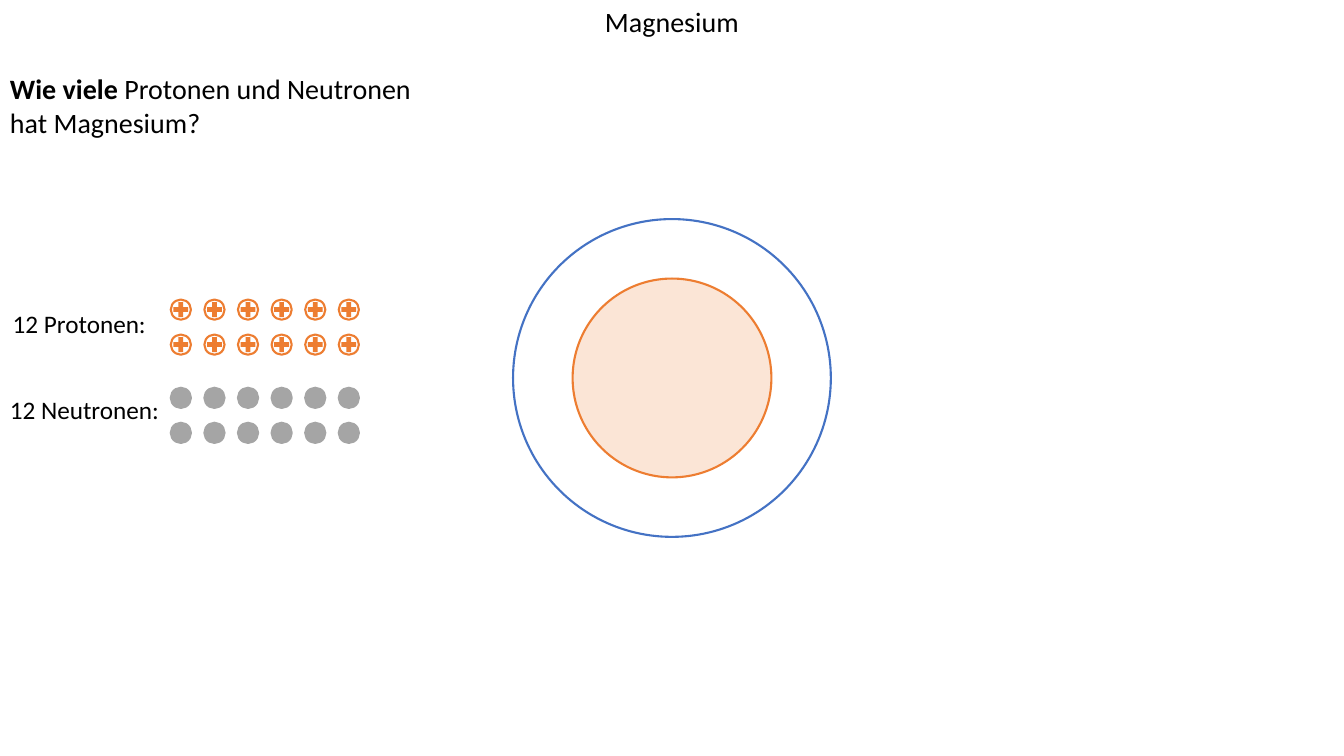
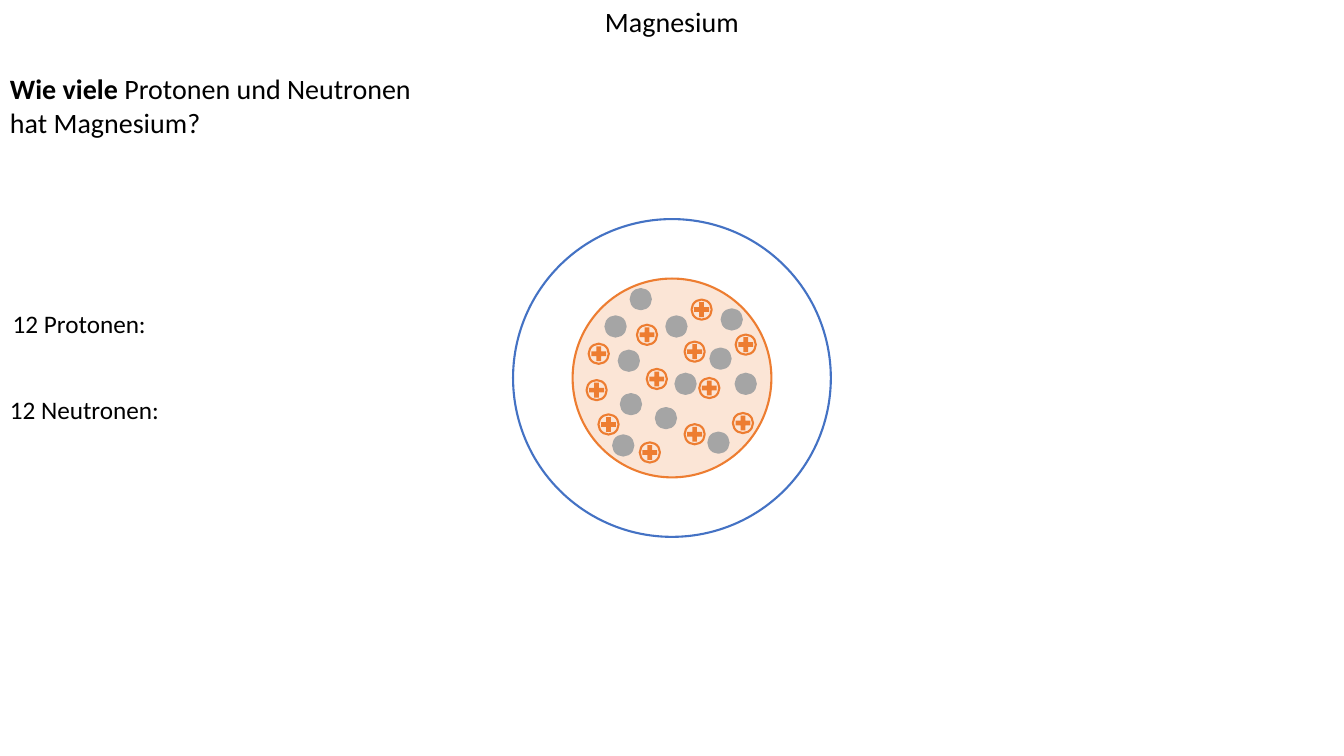
import pptx
import pptx.util
import pptx.dml.color
import pptx.enum.shapes
import pptx.enum.text
from dataclasses import dataclass

Pt = pptx.util.Pt
SHAPE = pptx.enum.shapes.MSO_SHAPE
ALIGN = pptx.enum.text.PP_ALIGN


@dataclass(frozen=True)
class Theme:
    font: str = "Calibri"
    text: str = "000000"
    shell: str = "4472C4"
    proton: str = "ED7D31"
    nucleus: str = "FBE5D6"
    neutron: str = "A5A5A5"
    heading_size: int = 20
    label_size: int = 18
    line_width: float = 1.5
    particle: float = 14.4


class Deck:
    def __init__(self, theme):
        self.theme = theme
        self.prs = pptx.Presentation()
        self.prs.slide_width = Pt(960)
        self.prs.slide_height = Pt(540)
        self.s = None

    def slide(self):
        self.s = self.prs.slides.add_slide(self.prs.slide_layouts[6])

    def text(self, x, y, w, h, runs, size, align=ALIGN.LEFT):
        tf = self.s.shapes.add_textbox(Pt(x), Pt(y), Pt(w), Pt(h)).text_frame
        tf.word_wrap = True
        tf.auto_size = pptx.enum.text.MSO_AUTO_SIZE.SHAPE_TO_FIT_TEXT
        p = tf.paragraphs[0]
        p.alignment = align
        for words, bold in runs:
            r = p.add_run()
            r.text = words
            r.font.name = self.theme.font
            r.font.size = Pt(size)
            r.font.bold = bold
            r.font.color.rgb = pptx.dml.color.RGBColor.from_string(self.theme.text)

    def shape(self, kind, x, y, size, fill=None, line=None, parent=None):
        shapes = (parent or self.s).shapes
        sp = shapes.add_shape(kind, Pt(x), Pt(y), Pt(size), Pt(size))
        sp.shadow.inherit = False
        if fill:
            sp.fill.solid()
            sp.fill.fore_color.rgb = pptx.dml.color.RGBColor.from_string(fill)
        else:
            sp.fill.background()
        if line:
            sp.line.color.rgb = pptx.dml.color.RGBColor.from_string(line)
            sp.line.width = Pt(self.theme.line_width)
        else:
            sp.line.fill.background()

    def ring(self, cx, cy, diameter, line, fill=None):
        self.shape(SHAPE.OVAL, cx - diameter / 2, cy - diameter / 2, diameter, fill, line)

    def proton(self, x, y):
        t = self.theme
        group = self.s.shapes.add_group_shape()
        self.shape(SHAPE.OVAL, x, y, t.particle, line=t.proton, parent=group)
        self.shape(SHAPE.MATH_PLUS, x, y, t.particle, fill=t.proton, parent=group)

    def neutron(self, x, y):
        t = self.theme
        self.shape(SHAPE.OVAL, x, y, t.particle, t.neutron, t.neutron)

    def atom_slide(self, protons, neutrons):
        t = self.theme
        self.slide()
        self.ring(480, 270, 142, t.proton, t.nucleus)
        self.text(419, 0, 122, 31.5, [("Magnesium", False)], t.heading_size, ALIGN.CENTER)
        self.ring(480, 270, 227, t.shell)
        question = [("Wie viele", True), (" Protonen und Neutronen hat Magnesium?", False)]
        self.text(0, 47.5, 322.5, 55.5, question, t.heading_size)
        self.text(2, 217, 120, 29, [("12 Protonen:", False)], t.label_size)
        for x, y in protons:
            self.proton(x, y)
        self.text(0, 278, 122.4, 29, [("12 Neutronen:", False)], t.label_size)
        for x, y in neutrons:
            self.neutron(x, y)


def grid(top):
    return [(122 + 24 * col, top + 25 * row) for col in range(6) for row in range(2)]


NUCLEUS_PROTONS = [
    (420.5, 245.5), (419, 271.5), (427.5, 296), (457, 316), (462, 263.5), (494, 214),
    (455, 232), (499.5, 270), (525.5, 239), (489, 244), (489, 303), (523.5, 295),
]
NUCLEUS_NEUTRONS = [
    (432.5, 226), (507.5, 249), (442, 250.5), (468.5, 291.5), (450.5, 206.5), (482.5, 267),
    (476, 226), (525.5, 267), (515.5, 221), (443.5, 281.5), (438, 311), (506, 309),
]


def main():
    deck = Deck(Theme())
    deck.atom_slide(grid(214), grid(277))
    deck.atom_slide(NUCLEUS_PROTONS, NUCLEUS_NEUTRONS)
    deck.prs.save("out.pptx")


if __name__ == "__main__":
    main()
